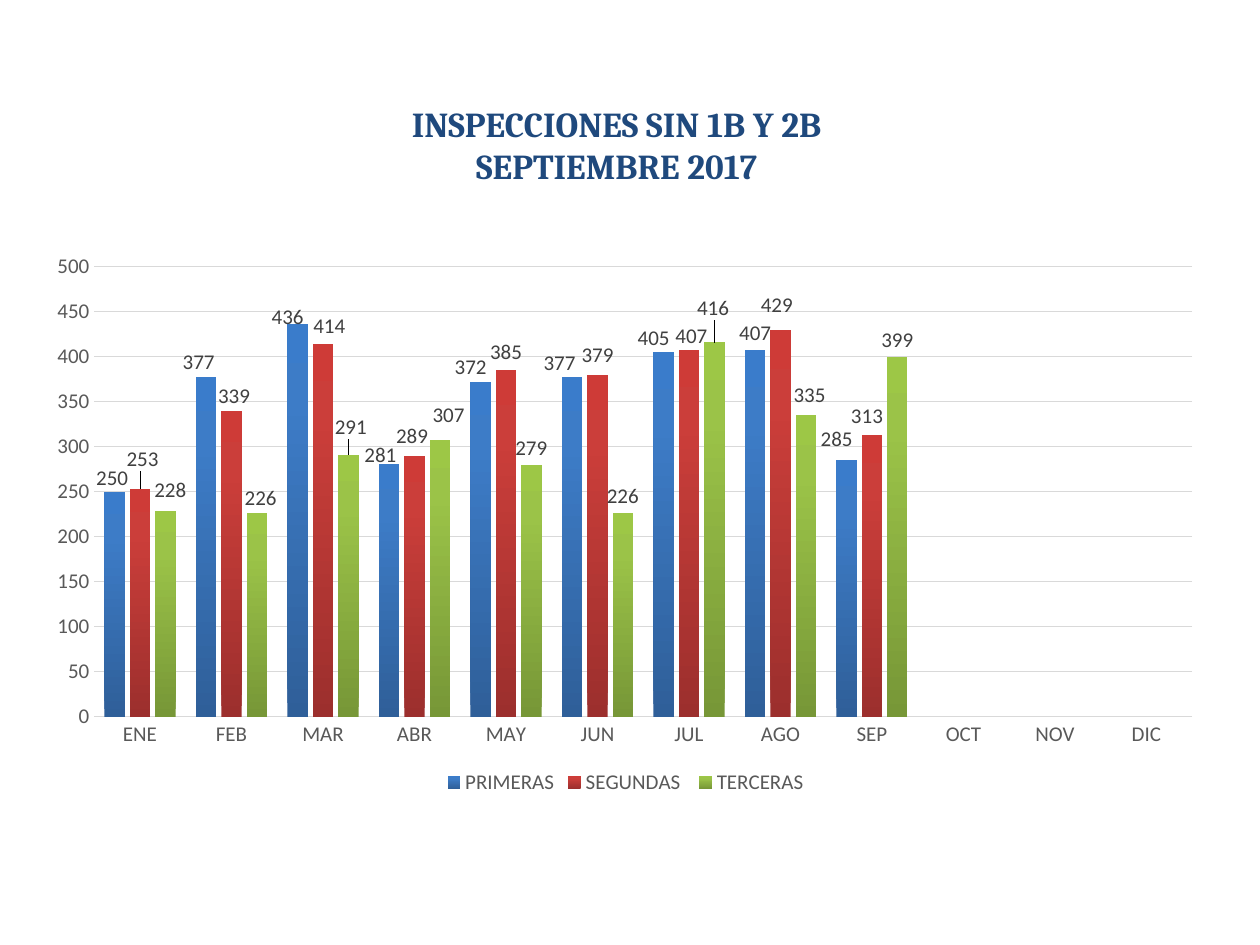
from copy import deepcopy

from lxml.etree import SubElement
from pptx import Presentation
from pptx.chart.data import CategoryChartData
from pptx.dml.color import RGBColor
from pptx.enum.chart import XL_CHART_TYPE, XL_LABEL_POSITION, XL_LEGEND_POSITION, XL_TICK_MARK
from pptx.enum.text import MSO_ANCHOR, PP_ALIGN
from pptx.oxml.ns import qn
from pptx.util import Inches, Pt

CHART_W, CHART_H = 9.37, 4.41
MONTHS = ["ENE", "FEB", "MAR", "ABR", "MAY", "JUN", "JUL", "AGO", "SEP", "OCT", "NOV", "DIC"]

# name, monthly values, gradient from bottom to top, label shifts in inches by month index
SERIES = [
    ("PRIMERAS", [250, 377, 436, 281, 372, 377, 405, 407, 285],
     ["2F5F99", "3D7CC7", "3A7CCB"],
     {0: (-0.02, 0.03), 1: (-0.06, 0.02), 2: (-0.08, 0.08), 3: (-0.07, 0.07),
      4: (-0.08, 0.02), 5: (-0.1, 0.03), 6: (-0.08, 0.03), 8: (-0.08, -0.03)}),
    ("SEGUNDAS ", [253, 339, 414, 289, 385, 379, 407, 429, 313],
     ["9C2F2D", "CB3E3A", "CE3B37"],
     {0: (0.02, -0.1), 1: (0.02, 0.02), 2: (0.05, 0), 3: (-0.02, -0.02),
      5: (0, -0.02), 6: (0.02, 0.03), 7: (-0.03, -0.06), 8: (-0.04, -0.01)}),
    ("TERCERAS", [228, 226, 291, 307, 279, 226, 416, 335, 399],
     ["779737", "9BC348", "9DC746"],
     {0: (0.04, -0.03), 1: (0.03, 0.02), 2: (0.02, -0.08), 3: (0.07, -0.06),
      6: (-0.01, -0.13), 7: (0.03, -0.02)}),
]


def rgb(value):
    return RGBColor.from_string(value)


def add_layout(parent, index, **settings):
    """Insert a manual c:layout into a chart element at the given child index."""
    layout = SubElement(parent, qn("c:layout"))
    parent.insert(index, layout)
    manual = SubElement(layout, qn("c:manualLayout"))
    for tag, value in settings.items():
        SubElement(manual, qn(f"c:{tag}")).set("val", str(value))


prs = Presentation()
prs.slide_width, prs.slide_height = Inches(10), Inches(7.5)
s = prs.slides.add_slide(prs.slide_layouts[5])

title = s.shapes.title
title.left, title.top = Inches(1.69), Inches(0.76)
title.width, title.height = Inches(6.41), Inches(0.77)
tf = title.text_frame
tf.text = "INSPECCIONES SIN 1B Y 2B\nSEPTIEMBRE 2017"
tf.word_wrap = True
tf.vertical_anchor = MSO_ANCHOR.MIDDLE
for p in tf.paragraphs:
    p.alignment = PP_ALIGN.CENTER
    for r in p.runs:
        r.font.name, r.font.size, r.font.bold = "Cambria", Pt(20), True
        r.font.color.rgb = rgb("1F497D")

data = CategoryChartData()
data.categories = MONTHS
for name, values, _, _ in SERIES:
    data.add_series(name, values + [None] * (len(MONTHS) - len(values)))
chart = s.shapes.add_chart(XL_CHART_TYPE.COLUMN_CLUSTERED, Inches(0.28), Inches(1.94),
                           Inches(CHART_W), Inches(CHART_H), data).chart
chart.has_title = False
chart.font.name, chart.font.size = "Calibri", Pt(10)
chart.font.color.rgb = rgb("000000")
plot_area = chart.element.find(".//" + qn("c:plotArea"))
for old in plot_area.findall(qn("c:layout")):
    plot_area.remove(old)
add_layout(plot_area, 0, layoutTarget="inner", xMode="edge", yMode="edge",
           x=0.05, y=0.04, w=0.93, h=0.81)

chart.has_legend = True
chart.legend.position = XL_LEGEND_POSITION.BOTTOM
chart.legend.include_in_layout = False

cat_axis, val_axis = chart.category_axis, chart.value_axis
for axis in (cat_axis, val_axis):
    axis.major_tick_mark = axis.minor_tick_mark = XL_TICK_MARK.NONE
for font in (cat_axis.tick_labels.font, val_axis.tick_labels.font, chart.legend.font):
    font.name, font.size = "Calibri", Pt(12)
    font.color.rgb = rgb("595959")
cat_axis.format.line.color.rgb = rgb("D9D9D9")
cat_axis.format.line.width = Pt(1)
val_axis.format.line.fill.background()
val_axis.minimum_scale, val_axis.maximum_scale, val_axis.major_unit = 0, 500, 50
grid = val_axis.major_gridlines.format.line
grid.color.rgb, grid.width = rgb("D9D9D9"), Pt(0.75)

plot = chart.plots[0]
plot.gap_width, plot.overlap = 100, -24
plot.vary_by_categories = False

for ser, (_, _, colors, shifts) in zip(plot.series, SERIES):
    fill = ser.format.fill
    fill.gradient()
    fill.gradient_angle = 90
    stops = ser._element.find(".//" + qn("a:gsLst"))
    stops.append(deepcopy(stops[-1]))
    for stop, position, color in zip(fill.gradient_stops, (0, 0.8, 1), colors):
        stop.position, stop.color.rgb = position, rgb(color)

    labels = ser.data_labels
    labels.show_value = True
    points = [ser.points[i].data_label for i in shifts]
    for label in [labels] + points:
        label.position = XL_LABEL_POSITION.OUTSIDE_END
        label.font.name, label.font.size = "Calibri", Pt(12)
        label.font.color.rgb = rgb("404040")
    for element, (dx, dy) in zip(ser._element.iter(qn("c:dLbl")), shifts.values()):
        add_layout(element, 1, x=dx / CHART_W, y=dy / CHART_H)

prs.save("out.pptx")
